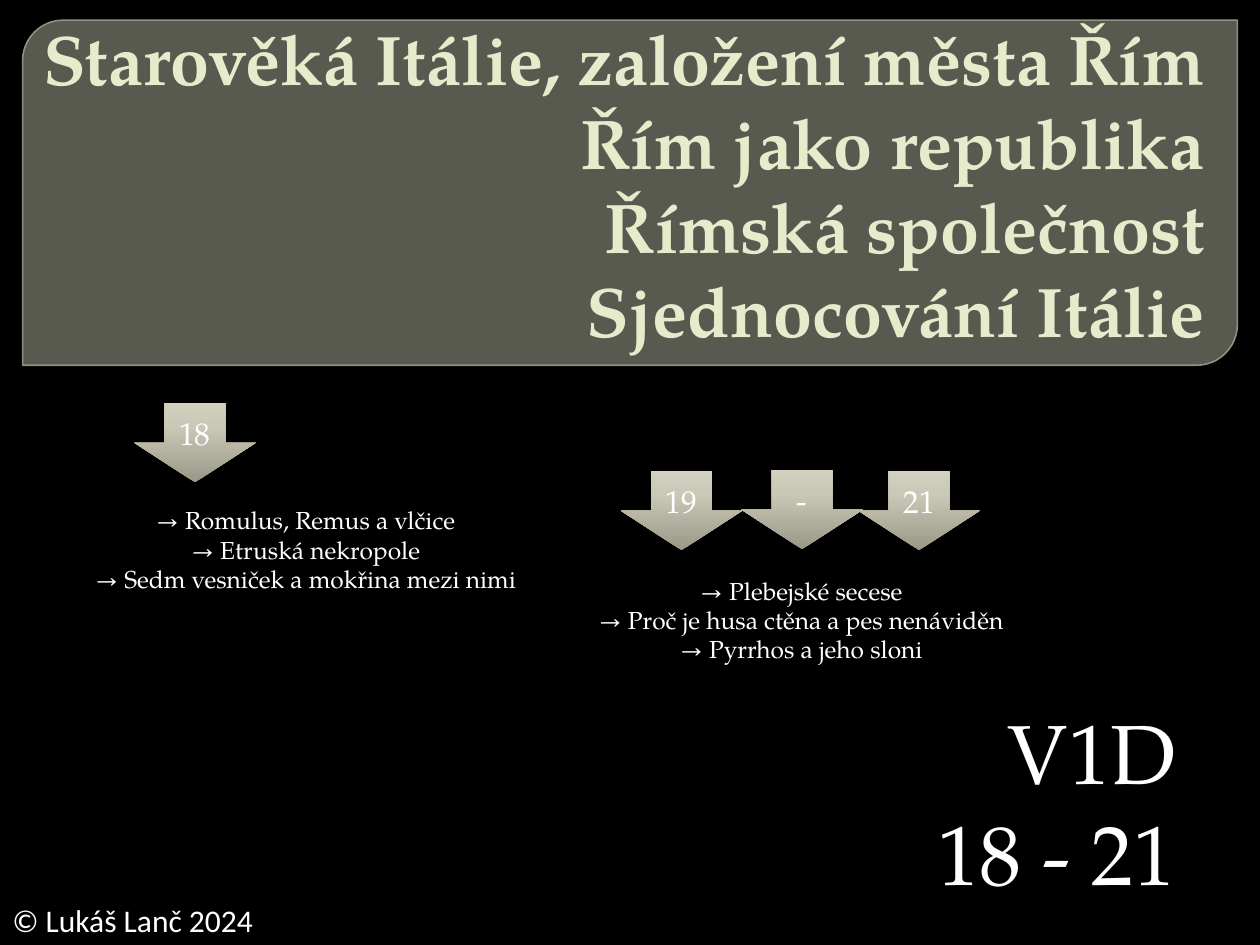
from copy import deepcopy
from dataclasses import dataclass

from lxml import etree
from pptx import Presentation
from pptx.dml.color import RGBColor
from pptx.enum.shapes import MSO_SHAPE
from pptx.enum.text import MSO_ANCHOR, MSO_AUTO_SIZE, PP_ALIGN
from pptx.oxml.ns import qn
from pptx.util import Pt

LEFT, CENTER, RIGHT = PP_ALIGN.LEFT, PP_ALIGN.CENTER, PP_ALIGN.RIGHT
TOP, MIDDLE, BOTTOM = MSO_ANCHOR.TOP, MSO_ANCHOR.MIDDLE, MSO_ANCHOR.BOTTOM
NO_FIT = MSO_AUTO_SIZE.NONE
DOWN_ARROW = MSO_SHAPE.DOWN_ARROW
BANNER = MSO_SHAPE.ROUND_2_DIAG_RECTANGLE
TITLE_ONLY = 5


@dataclass(frozen=True)
class Theme:
    background: str = "000000"
    text: str = "FFFFFF"
    title: str = "E7EACB"
    banner: str = "888B7B"
    banner_line: str = "9DA090"
    arrow_stops: tuple = ((0, "9B9887"), (0.72, "CAC8B7"), (1, "D2D0BF"))
    serif: str = "TeX Gyre Pagella"
    sans: str = "Calibri"
    title_size: int = 40
    class_size: int = 48
    label_size: int = 18
    topic_size: int = 14


def set_values(target, values):
    for name, value in values.items():
        setattr(target, name, value)


def set_opacity(fill_element, percent):
    alpha = etree.SubElement(fill_element.find(qn("a:srgbClr")), qn("a:alpha"))
    alpha.set("val", str(percent * 1000))


class SlideBuilder:
    def __init__(self, deck, theme):
        self.theme = theme
        self.page = deck.slides.add_slide(deck.slide_layouts[TITLE_ONLY])
        fill = self.page.background.fill
        fill.solid()
        fill.fore_color.rgb = RGBColor.from_string(theme.background)

    def fill_text(self, box, lines, size, align, anchor=TOP, right=7.2, color=None, face=None, bold=False):
        frame = box.text_frame
        set_values(frame, {
            "word_wrap": True, "auto_size": NO_FIT, "vertical_anchor": anchor,
            "margin_left": Pt(7.2 if right == 7.2 else 3.6), "margin_right": Pt(right),
            "margin_top": Pt(3.6), "margin_bottom": Pt(3.6),
        })
        frame.text = "\n".join(lines)
        for para in frame.paragraphs:
            set_values(para, {"alignment": align, "line_spacing": 1.0, "space_before": Pt(0)})
            for span in para.runs:
                set_values(span.font, {"name": face or self.theme.serif, "size": Pt(size), "bold": bold})
                span.font.color.rgb = RGBColor.from_string(color or self.theme.text)

    def shape(self, kind, bounds):
        shape = self.page.shapes.add_shape(kind, *map(Pt, bounds))
        shape.shadow.inherit = False
        return shape

    def banner(self, bounds):
        shape = self.shape(BANNER, bounds)
        shape.adjustments[0] = 0.118
        shape.fill.solid()
        shape.fill.fore_color.rgb = RGBColor.from_string(self.theme.banner)
        shape.line.color.rgb = RGBColor.from_string(self.theme.banner_line)
        shape.line.width = Pt(0.87)
        properties = shape.element.spPr
        set_opacity(properties.find(qn("a:solidFill")), 65)
        set_opacity(properties.find(qn("a:ln")).find(qn("a:solidFill")), 88)
        self.page.shapes.title.element.addprevious(shape.element)

    def title(self, lines, bounds):
        box = self.page.shapes.title
        set_values(box, dict(zip(("left", "top", "width", "height"), map(Pt, bounds))))
        self.fill_text(box, ["\v".join(lines)], self.theme.title_size, RIGHT, BOTTOM, 18, self.theme.title, bold=True)

    def text(self, lines, bounds, size, align, **options):
        box = self.page.shapes.add_textbox(*map(Pt, bounds))
        self.fill_text(box, lines, size, align, **options)

    def arrow(self, label, left, top):
        shape = self.shape(DOWN_ARROW, (left, top, 69.3, 45.3))
        shape.line.fill.background()
        shape.fill.gradient()
        shape.fill.gradient_angle = 90
        stop_list = shape.element.spPr.find(qn("a:gradFill")).find(qn("a:gsLst"))
        stop_list.append(deepcopy(stop_list[0]))
        for stop, (position, color) in zip(shape.fill.gradient_stops, self.theme.arrow_stops):
            stop.position = position
            stop.color.rgb = RGBColor.from_string(color)
        self.fill_text(shape, [label], self.theme.label_size, CENTER, MIDDLE)

    def topics(self, topics, left, top):
        lines = [f"→ {topic}" for topic in topics]
        self.text(lines, (left, top, 321, 58.2), self.theme.topic_size, CENTER)


def main():
    theme = Theme()
    deck = Presentation()
    set_values(deck, {"slide_width": Pt(720), "slide_height": Pt(540)})
    builder = SlideBuilder(deck, theme)
    builder.banner((12.9, 11.5, 694.2, 197.2))
    builder.title(
        ["Starověká Itálie, založení města Řím", "Řím jako republika", "Římská společnost", "Sjednocování Itálie"],
        (14.4, 30.2, 692, 174.2),
    )
    builder.text(["© Lukáš Lanč 2024"], (0, 511.2, 184.3, 28.8), theme.label_size, LEFT, face=theme.sans)
    for label, left, top in (("18", 76.8, 230.4), ("19", 354.8, 269.2), ("21", 490.5, 269.2), ("-", 423.7, 268.6)):
        builder.arrow(label, left, top)
    builder.topics(["Romulus, Remus a vlčice", "Etruská nekropole", "Sedm vesniček a mokřina mezi nimi"], 14.4, 285.1)
    builder.topics(["Plebejské secese", "Proč je husa ctěna a pes nenáviděn", "Pyrrhos a jeho sloni"], 297.6, 325.4)
    builder.text(["V1D", "18 - 21"], (175, 396.7, 516.2, 138.2), theme.class_size, RIGHT, right=19.4)
    deck.save("out.pptx")


if __name__ == "__main__":
    main()
